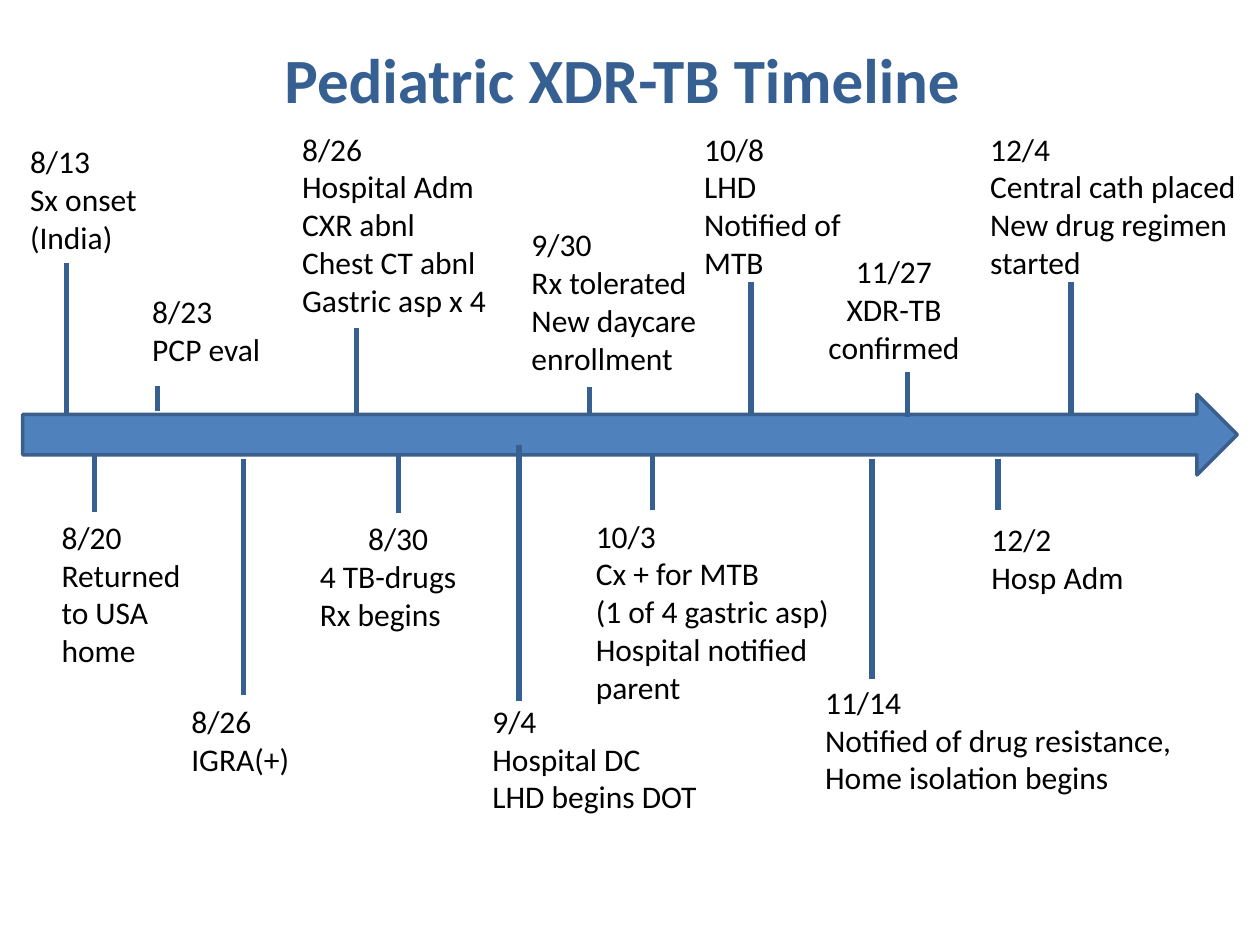
from pptx import Presentation
from pptx.dml.color import RGBColor
from pptx.enum.shapes import MSO_CONNECTOR, MSO_SHAPE
from pptx.enum.text import MSO_ANCHOR, PP_ALIGN
from pptx.oxml.ns import qn
from pptx.util import Inches, Pt
from lxml import etree

NAVY = "376092"

EVENTS = [
    ((0.14, 1.08, 1.3, 1.01), "8/13\nSx onset\n(India)", (0.53, 2.09, 3.29), 0),
    ((1.11, 2.27, 1.19, 1.01), "8/23\nPCP eval", (1.25, 3.06, 3.26), 0),
    ((2.3, 0.98, 1.73, 1.62),
     "8/26\nHospital Adm\nCXR abnl\nChest CT abnl\nGastric asp x 4", (2.83, 2.6, 3.28), 0),
    ((4.12, 1.74, 1.63, 1.31),
     "9/30\nRx tolerated\nNew daycare enrollment", (4.68, 3.07, 3.29), 0),
    ((5.49, 0.98, 1.33, 1.62), "10/8\nLHD\nNotified of MTB", (5.96, 2.24, 3.3), 0),
    ((6.39, 1.95, 1.41, 1.01), "11/27\nXDR-TB\nconfirmed", (7.2, 2.95, 3.31), 3),
    ((7.76, 0.98, 2.36, 1.31),
     "12/4\nCentral cath placed\nNew drug regimen\nstarted", (8.5, 2.24, 3.3), 0),
    ((0.39, 4.06, 1.22, 1.31), "8/20\nReturned to USA home", (0.75, 4.06, 3.6), 0),
    ((1.42, 5.52, 1.02, 0.71), "8/26\nIGRA(+)", (1.93, 5.52, 3.64), 0),
    ((2.44, 4.07, 1.44, 1.01), "8/30\n4 TB-drugs Rx begins", (3.17, 4.07, 3.62), 1),
    ((3.81, 5.52, 1.94, 1.01), "9/4\nHospital DC\nLHD begins DOT", (4.12, 5.56, 3.53), 0),
    ((4.63, 4.05, 2.55, 1.62),
     "10/3\nCx + for MTB\n(1 of 4 gastric asp)\nHospital notified parent", (5.18, 4.05, 3.6), 0),
    ((6.45, 5.37, 3.05, 1.01),
     "11/14\nNotified of drug resistance, Home isolation begins", (6.92, 5.39, 3.64), 0),
    ((7.77, 4.08, 1.37, 0.71), "12/2\nHosp Adm", (7.92, 4.05, 3.64), 0),
]


def color(code):
    return RGBColor.from_string(code)


def add_text(slide, box, text, size, code, bold=False, mids=0):
    shape = slide.shapes.add_textbox(*map(Inches, box))
    frame = shape.text_frame
    frame.word_wrap = True
    frame.text = text
    for i, para in enumerate(frame.paragraphs):
        para.alignment = PP_ALIGN.CENTER if i < mids else PP_ALIGN.LEFT
        for run in para.runs:
            run.font.name = "Calibri"
            run.font.size = Pt(size)
            run.font.bold = bold
            run.font.color.rgb = color(code)
    return shape


def add_title(slide, box):
    shape = add_text(slide, box, "Pediatric XDR-TB Timeline", 36, NAVY, True, 1)
    shape.text_frame.vertical_anchor = MSO_ANCHOR.MIDDLE


def add_arrow(slide, box):
    arrow = slide.shapes.add_shape(MSO_SHAPE.RIGHT_ARROW, *map(Inches, box))
    arrow.shadow.inherit = False
    arrow.fill.solid()
    arrow.fill.fore_color.rgb = color("4F81BD")
    arrow.line.color.rgb = color("3A5F8C")
    arrow.line.width = Pt(2)


def add_event(slide, box, text, stem, mids):
    label = add_text(slide, box, text, 18, "000000", mids=mids)
    x, tip, base = stem
    line = slide.shapes.add_connector(
        MSO_CONNECTOR.STRAIGHT, Inches(x), Inches(tip), Inches(x), Inches(base))
    line.line.color.rgb = color(NAVY)
    line.line.width = Pt(3)
    etree.SubElement(line._element.spPr, qn("a:effectLst"))
    left, top, width, _ = box
    if tip == top and abs(left + width / 2 - x) < 0.02:
        line.begin_connect(label, 0)
        line.end_x = line.begin_x


def main():
    deck = Presentation()
    deck.slide_width, deck.slide_height = Inches(10), Inches(7.5)
    slide = deck.slides.add_slide(deck.slide_layouts[6])
    add_title(slide, (0.44, 0.27, 9, 0.7))
    add_arrow(slide, (0.18, 3.13, 9.64, 0.64))
    for event in EVENTS:
        add_event(slide, *event)
    deck.save("out.pptx")


if __name__ == "__main__":
    main()
